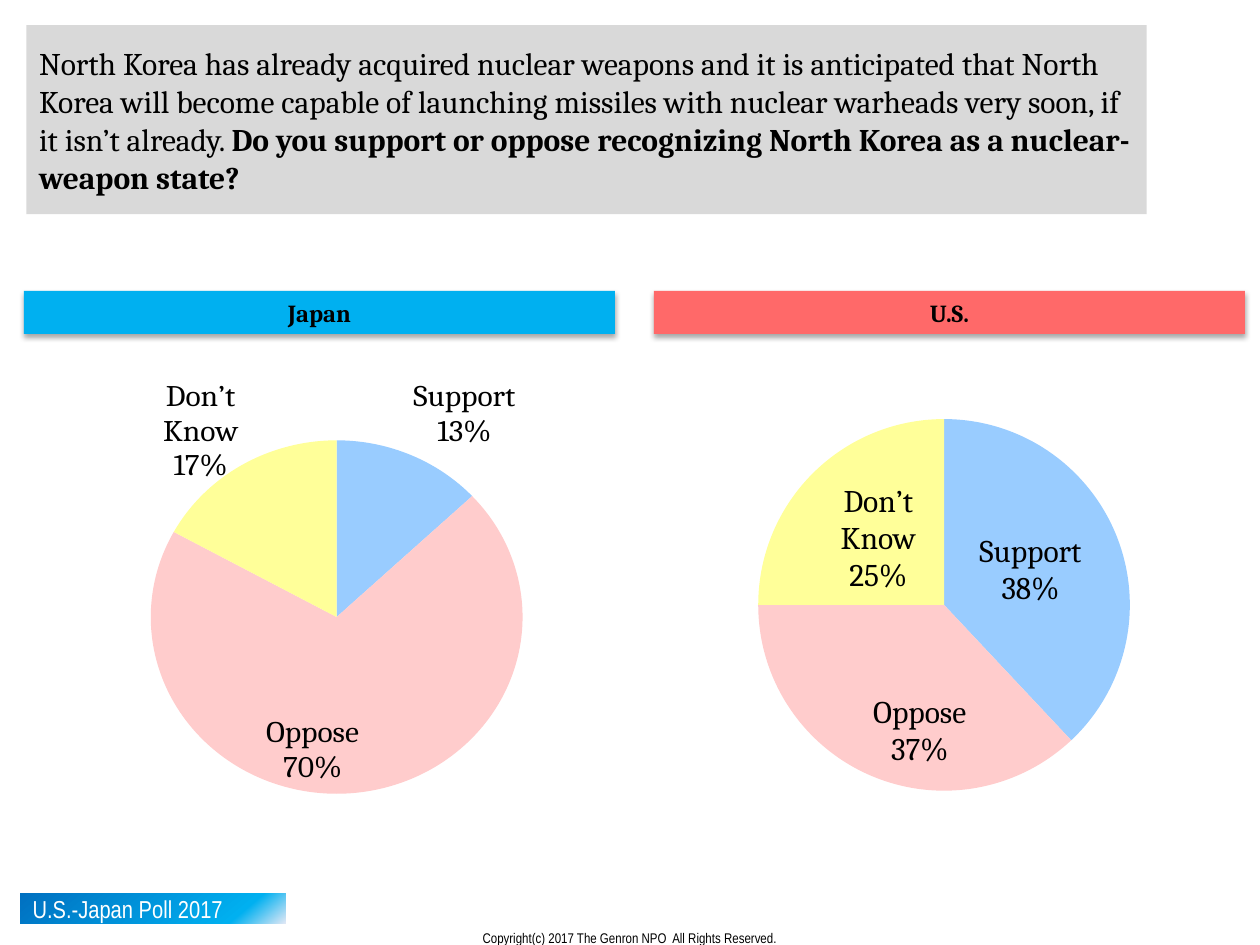
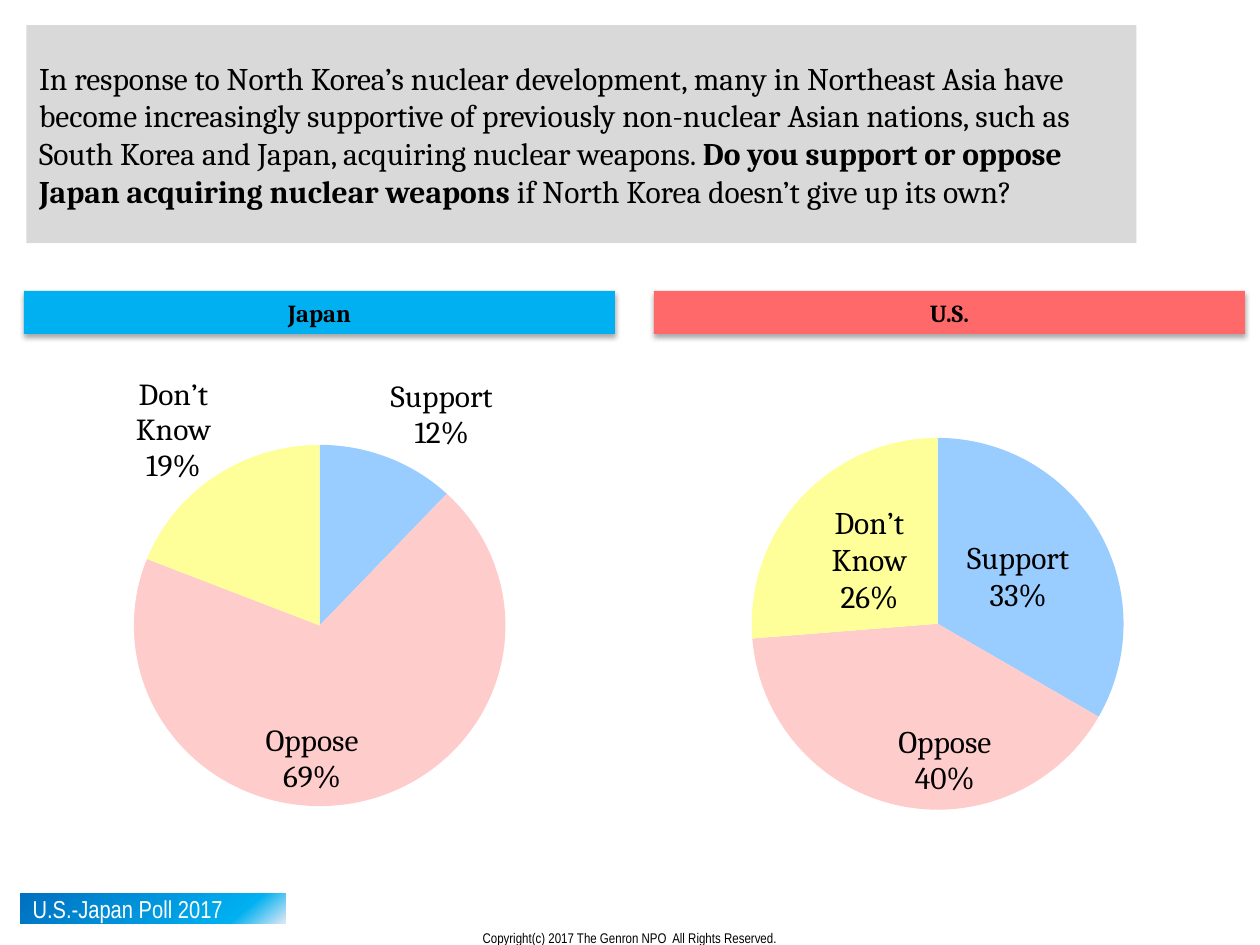
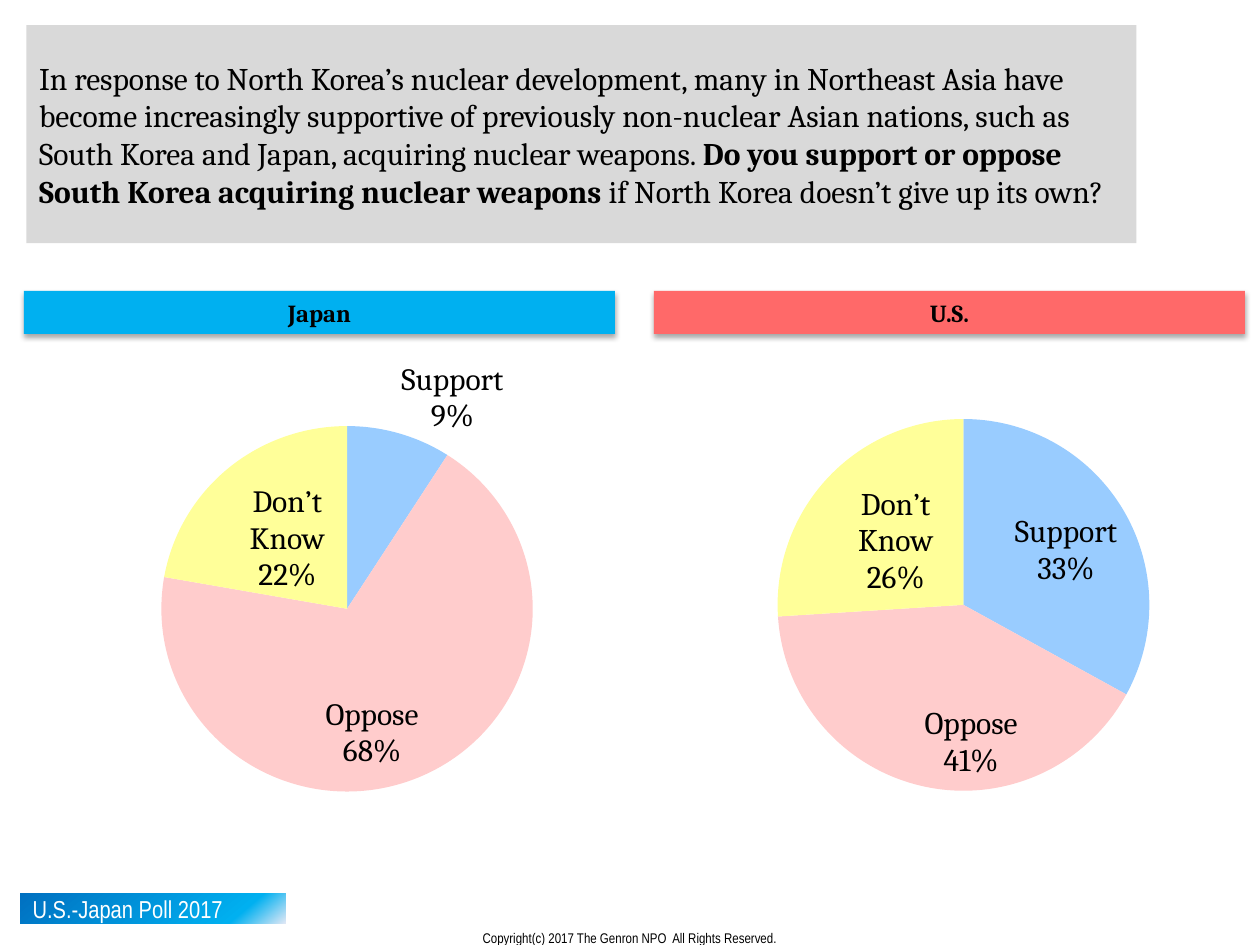
from pptx import Presentation
from pptx.chart.data import CategoryChartData
from pptx.dml.color import RGBColor
from pptx.enum.chart import XL_CHART_TYPE, XL_LABEL_POSITION
from pptx.enum.shapes import MSO_SHAPE
from pptx.enum.text import MSO_ANCHOR, MSO_AUTO_SIZE, PP_ALIGN
from pptx.oxml import parse_xml
from pptx.oxml.ns import nsdecls, qn
from pptx.util import Inches, Pt
from lxml.etree import SubElement

SERIF, NARROW = "Cambria", "Arial Narrow"
BLACK, WHITE, GREY = "000000", "FFFFFF", "D9D9D9"
BANDS = [("Japan", 0.19, "00B0F0"), ("U.S.", 5.19, "FF6969")]
ANSWERS = {"Support": "99CCFF", "Oppose": "FFCCCC", "Don’t Know": "FFFF99"}
PIE_DIAMETER = 2.95
CENTER = XL_LABEL_POSITION.CENTER
EDGE = XL_LABEL_POSITION.INSIDE_END
OUT = XL_LABEL_POSITION.OUTSIDE_END

NUCLEAR_INTRO = (
    "In response to North Korea’s nuclear development, many in Northeast Asia have "
    "become increasingly supportive of previously non-nuclear Asian nations, such as "
    "South Korea and Japan, acquiring nuclear weapons. "
)
CONDITION = "if North Korea doesn’t give up its own?"

POLLS = [
    {
        "question": [
            ("North Korea has already acquired nuclear weapons and it is anticipated that "
             "North Korea will become capable of launching missiles with nuclear warheads "
             "very soon, if it isn’t already. ", False),
            ("Do you support or oppose recognizing North Korea as a nuclear-weapon state?", True),
        ],
        "size": (8.89, 1.5),
        "pies": [
            ((0.19, 2.81, 4.96, 3.94), (0.13, 0.70, 0.17), (OUT, EDGE, OUT)),
            ((5.12, 2.81, 4.75, 3.94), (0.38, 0.37, 0.25), (CENTER, EDGE, CENTER)),
        ],
    },
    {
        "question": [
            (NUCLEAR_INTRO, False),
            ("Do you support or oppose Japan acquiring nuclear weapons ", True),
            (CONDITION, False),
        ],
        "size": (8.81, 1.73),
        "pies": [
            ((0.21, 2.88, 4.66, 4.02), (0.12, 0.69, 0.19), (OUT, EDGE, OUT)),
            ((5, 2.96, 4.88, 3.94), (0.33, 0.40, 0.26), (CENTER, EDGE, CENTER)),
        ],
    },
    {
        "question": [
            (NUCLEAR_INTRO, False),
            ("Do you support or oppose South Korea acquiring nuclear weapons ", True),
            (CONDITION, False),
        ],
        "size": (8.81, 1.73),
        "pies": [
            ((0.43, 2.81, 4.65, 3.94), (0.09, 0.68, 0.22), (OUT, EDGE, CENTER)),
            ((5.57, 2.81, 4.15, 3.94), (0.33, 0.41, 0.26), (EDGE, EDGE, CENTER)),
        ],
    },
]


def rgb(color):
    return RGBColor.from_string(color)


def fill_solid(obj, color):
    obj.fill.solid()
    obj.fill.fore_color.rgb = rgb(color)


def style_font(font, size, name=SERIF, color=BLACK, bold=False):
    font.size, font.name, font.bold = Pt(size), name, bold
    font.color.rgb = rgb(color)


def write(sp, text, size=18, font=SERIF, color=BLACK, bold=False,
          align=PP_ALIGN.LEFT, anchor=MSO_ANCHOR.MIDDLE, wrap=True):
    tf = sp.text_frame
    tf.word_wrap = wrap
    tf.auto_size = MSO_AUTO_SIZE.NONE
    tf.vertical_anchor = anchor
    p = tf.paragraphs[0]
    p.alignment = align
    runs = [(text, bold)] if isinstance(text, str) else text
    for content, is_bold in runs:
        r = p.add_run()
        r.text = content
        style_font(r.font, size, font, color, is_bold)


def add_rect(s, left, top, width, height):
    sp = s.shapes.add_shape(MSO_SHAPE.RECTANGLE, Inches(left), Inches(top),
                            Inches(width), Inches(height))
    sp.shadow.inherit = False
    sp.line.fill.background()
    return sp


def add_question(s, question, size):
    sp = s.shapes.title
    sp.left, sp.top = Inches(0.21), Inches(0.2)
    sp.width, sp.height = (Inches(n) for n in size)
    fill_solid(sp, GREY)
    write(sp, question)


def add_shadow(sp):
    effects = sp._element.spPr.find(qn("a:effectLst"))
    effects.append(parse_xml(
        f'<a:outerShdw {nsdecls("a")} blurRad="{Pt(3.1)}" dist="{Pt(1.8)}" '
        f'dir="5400000" rotWithShape="0"><a:srgbClr val="{BLACK}">'
        '<a:alpha val="35000"/></a:srgbClr></a:outerShdw>'))


def add_band(s, country, left, color):
    sp = add_rect(s, left, 2.31, 4.69, 0.34)
    fill_solid(sp, color)
    add_shadow(sp)
    write(sp, country, size=14, bold=True, align=PP_ALIGN.CENTER)


def fill_gradient(sp, stops, angle):
    sp.fill.gradient()
    gs = "".join(f'<a:gs pos="{pos * 1000}"><a:srgbClr val="{color}"/></a:gs>'
                 for pos, color in stops)
    old = sp._element.spPr.find(qn("a:gradFill"))
    old.getparent().replace(old, parse_xml(
        f'<a:gradFill {nsdecls("a")} rotWithShape="1"><a:gsLst>{gs}</a:gsLst>'
        f'<a:lin ang="{angle * 60000}" scaled="0"/></a:gradFill>'))


def add_footer(s):
    sp = add_rect(s, 0.16, 7.09, 2.11, 0.24)
    fill_gradient(sp, [(0, "0070C0"), (81, "00B0F0"), (100, "E1E8F5")], 50)
    write(sp, "U.S.-Japan Poll 2017", size=14, font=NARROW, color=WHITE, wrap=False)
    box = s.shapes.add_textbox(Inches(2.27), Inches(7.33), Inches(5.46), Inches(0.24))
    write(box, "Copyright(c) 2017 The Genron NPO  All Rights Reserved.", size=8,
          font=NARROW, align=PP_ALIGN.CENTER, anchor=MSO_ANCHOR.TOP)


def label_point(point, position):
    label = point.data_label
    style_font(label.font, 18)
    label.position = position
    dLbl = label._get_or_add_dLbl()
    dLbl.find(qn("c:showCatName")).set("val", "1")
    SubElement(dLbl, qn("c:separator")).text = "\n"


def place_plot(chart, width, height):
    w, h = PIE_DIAMETER / width, PIE_DIAMETER / height
    sizes = {"x": 0.5 - w / 2, "y": 0.505 - h / 2, "w": w, "h": h}
    values = "".join(f'<c:{key} val="{val:.3f}"/>' for key, val in sizes.items())
    area = chart._chartSpace.chart.plotArea
    for old in area.findall(qn("c:layout")):
        area.remove(old)
    area.insert(0, parse_xml(
        f'<c:layout {nsdecls("c")}><c:manualLayout><c:layoutTarget val="inner"/>'
        f'<c:xMode val="edge"/><c:yMode val="edge"/>{values}'
        '</c:manualLayout></c:layout>'))


def add_pie(s, frame, shares, positions):
    data = CategoryChartData(number_format="0%")
    data.categories = list(ANSWERS)
    data.add_series("Series 1", shares)
    chart = s.shapes.add_chart(XL_CHART_TYPE.PIE, *(Inches(n) for n in frame), data).chart
    chart.has_legend = False
    chart.has_title = False
    style_font(chart.font, 18)
    place_plot(chart, *frame[2:])
    plot = chart.plots[0]
    plot.vary_by_categories = True
    series = plot.series[0]
    labels = series.data_labels
    labels.show_value = labels.show_category_name = True
    labels.number_format, labels.number_format_is_linked = "0%", False
    for i, (color, position) in enumerate(zip(ANSWERS.values(), positions)):
        point = series.points[i]
        fill_solid(point.format, color)
        point.format.line.fill.background()
        label_point(point, position)


def add_poll(prs, question, size, pies):
    s = prs.slides.add_slide(prs.slide_layouts[5])
    add_question(s, question, size)
    for pie in pies:
        add_pie(s, *pie)
    for band in BANDS:
        add_band(s, *band)
    add_footer(s)


def main():
    prs = Presentation()
    prs.slide_width, prs.slide_height = Inches(10), Inches(7.5)
    for poll in POLLS:
        add_poll(prs, **poll)
    prs.save("out.pptx")


if __name__ == "__main__":
    main()
